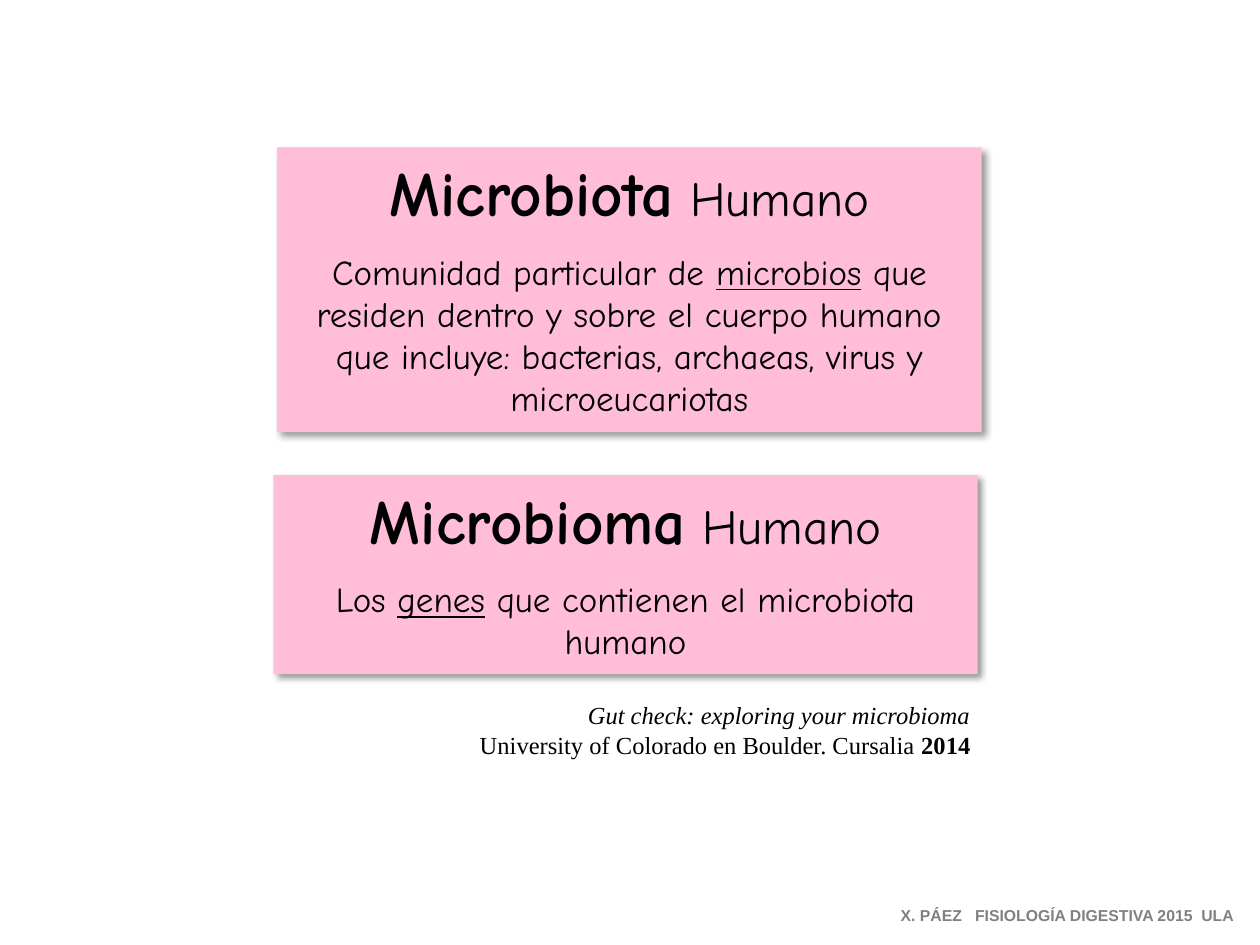
from dataclasses import dataclass

from lxml.etree import SubElement
from pptx import Presentation
from pptx.dml.color import RGBColor
from pptx.enum.shapes import MSO_SHAPE
from pptx.enum.text import MSO_ANCHOR, MSO_AUTO_SIZE, PP_ALIGN
from pptx.oxml.ns import qn
from pptx.util import Inches, Pt

COLORS = {"card": "FFBDD8", "text": "000000", "footer": "808080", "shadow": "000000"}
SLIDE_WIDTH, SLIDE_HEIGHT = Inches(10), Inches(7.5)


@dataclass(frozen=True)
class Box:
    """Place and size in inches."""
    left: float
    top: float
    width: float
    height: float

    def lengths(self) -> list:
        return [Inches(v) for v in (self.left, self.top, self.width, self.height)]


@dataclass(frozen=True)
class Span:
    text: str
    size: float | None = None
    bold: bool | None = None
    italic: bool | None = None
    underline: bool | None = None


@dataclass(frozen=True)
class Line:
    spans: tuple
    size: float
    face: str = "Comic Neue"
    color: str = "text"
    align: PP_ALIGN = PP_ALIGN.CENTER
    before: float = 0


@dataclass(frozen=True)
class Definition:
    box: Box
    term: str
    meaning: tuple


def write_lines(frame, lines: list) -> None:
    for index, line in enumerate(lines):
        paragraph = frame.paragraphs[0] if index == 0 else frame.add_paragraph()
        paragraph.alignment = line.align
        if line.before:
            paragraph.space_before = Pt(line.before)
        paragraph.font.name = line.face
        paragraph.font.size = Pt(line.size)
        paragraph.font.color.rgb = RGBColor.from_string(COLORS[line.color])
        for span in line.spans:
            run = paragraph.add_run()
            run.text = span.text
            if span.size:
                run.font.size = Pt(span.size)
            run.font.bold = span.bold
            run.font.italic = span.italic
            run.font.underline = span.underline


def add_soft_shadow(shape) -> None:
    shape.shadow.inherit = False
    effects = shape._element.spPr.find(qn("a:effectLst"))
    shadow = SubElement(effects, qn("a:outerShdw"), blurRad=str(Pt(4)),
                        dist=str(Pt(3)), dir=str(45 * 60000), rotWithShape="0")
    color = SubElement(shadow, qn("a:srgbClr"), val=COLORS["shadow"])
    SubElement(color, qn("a:alpha"), val="40000")


def add_definition(slide, definition: Definition) -> None:
    card = slide.shapes.add_shape(MSO_SHAPE.RECTANGLE, *definition.box.lengths())
    card.fill.solid()
    card.fill.fore_color.rgb = RGBColor.from_string(COLORS["card"])
    card.line.fill.background()
    add_soft_shadow(card)
    frame = card.text_frame
    frame.word_wrap = True
    frame.vertical_anchor = MSO_ANCHOR.TOP
    heading = Line((Span(definition.term, bold=True), Span(" Humano", size=28)), size=36)
    meaning = [Line(spans, size=20, before=0 if index else 12)
               for index, spans in enumerate(definition.meaning)]
    write_lines(frame, [heading, *meaning])


def add_note(slide, box: Box, lines: list) -> None:
    frame = slide.shapes.add_textbox(*box.lengths()).text_frame
    frame.word_wrap = False
    frame.auto_size = MSO_AUTO_SIZE.SHAPE_TO_FIT_TEXT
    write_lines(frame, lines)


DEFINITIONS = (
    Definition(Box(2.2, 1.17, 5.59, 2.26), "Microbiota", (
        (Span("Comunidad particular de "), Span("microbios", underline=True),
         Span(" que residen dentro y sobre el cuerpo humano")),
        (Span("que incluye: bacterias, archaeas, virus y microeucariotas"),),
    )),
    Definition(Box(2.17, 3.77, 5.59, 1.58), "Microbioma", (
        (Span("Los "), Span("genes", underline=True),
         Span(" que contienen el microbiota humano")),
    )),
)
CITATION = [
    Line(spans, size=14, face="Times New Roman", align=PP_ALIGN.RIGHT)
    for spans in (
        (Span("Gut check: exploring your microbioma", italic=True),),
        (Span("University of Colorado en Boulder. Cursalia "), Span("2014", bold=True)),
    )
]
FOOTER = [Line((Span("X. PÁEZ   FISIOLOGÍA DIGESTIVA 2015  ULA", bold=True),),
               size=9, face="Arial", color="footer", align=PP_ALIGN.LEFT)]


def main() -> None:
    presentation = Presentation()
    presentation.slide_width, presentation.slide_height = SLIDE_WIDTH, SLIDE_HEIGHT
    slide = presentation.slides.add_slide(presentation.slide_layouts[6])
    for definition in DEFINITIONS:
        add_definition(slide, definition)
    add_note(slide, Box(3.62, 5.51, 4.18, 0.57), CITATION)
    add_note(slide, Box(7.05, 7.14, 2.9, 0.25), FOOTER)
    presentation.save("out.pptx")


if __name__ == "__main__":
    main()
